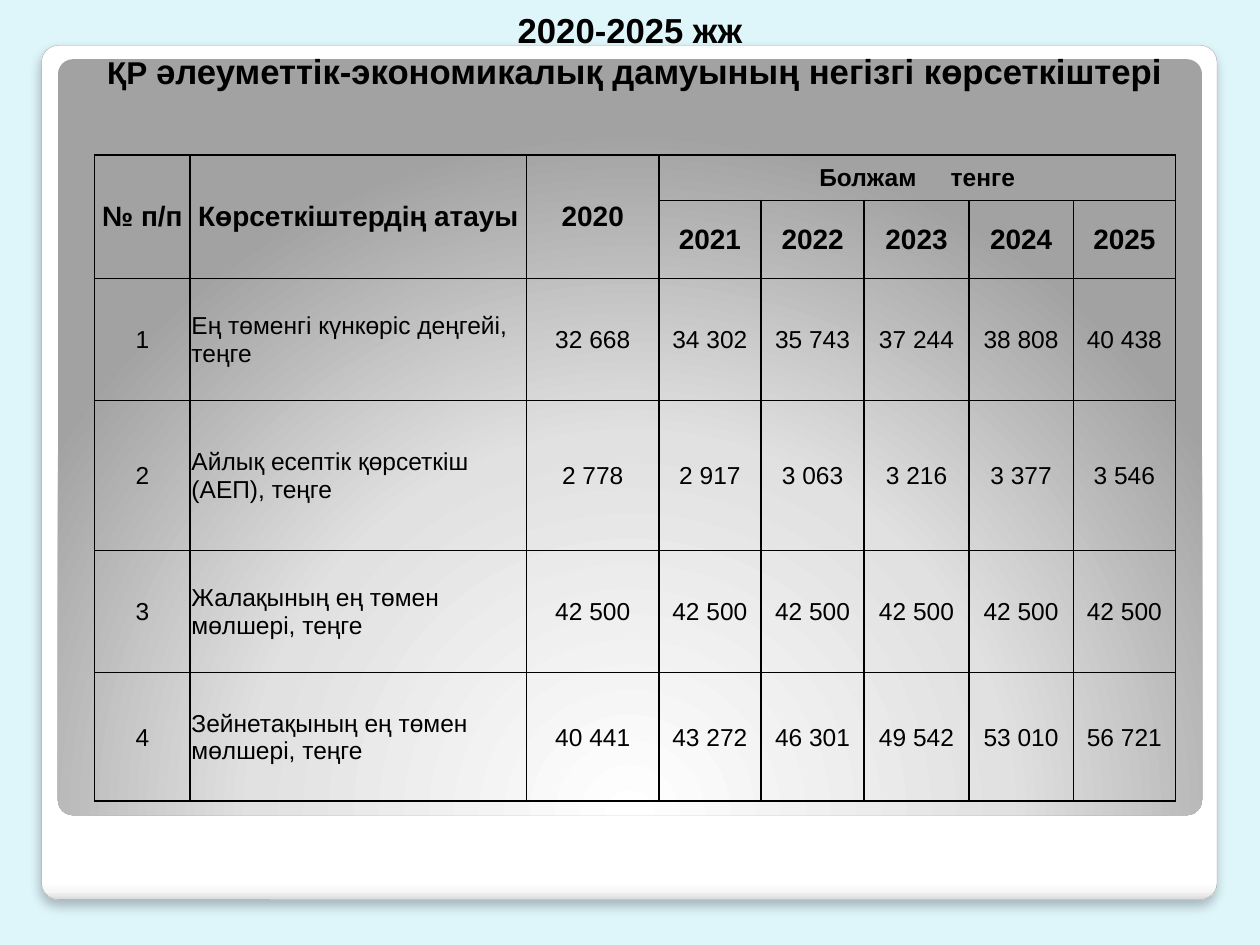
from lxml import etree
from pptx import Presentation
from pptx.dml.color import RGBColor
from pptx.enum.shapes import MSO_SHAPE as SHAPE
from pptx.enum.text import MSO_ANCHOR as ANCHOR, PP_ALIGN as ALIGN
from pptx.oxml import parse_xml
from pptx.oxml.ns import nsdecls
from pptx.util import Inches, Pt

COLORS = {"bg": "DEF5FA", "text": "000000", "edge": "A4A4A4",
          "white": "FFFFFF", "pale": "F7F7F7", "rim": "DADADA",
          "light": "E1E1E1", "gray": "A2A2A2", "outline": "00BDEC"}


def xml(tag, body, attrs=""):
    return parse_xml(f"<a:{tag} {nsdecls('a')} {attrs}>{body}</a:{tag}>")


def add_run(p, text, size, bold):
    r = p.add_run()
    r.text = text
    r.font.name = "Arial"
    r.font.size = Pt(size)
    r.font.bold = bold
    r.font.color.rgb = RGBColor.from_string(COLORS["text"])
    return r


prs = Presentation()
prs.slide_width, prs.slide_height = Inches(10), Inches(7.5)
s = prs.slides.add_slide(prs.slide_layouts[5])
s.background.fill.solid()
s.background.fill.fore_color.rgb = RGBColor.from_string(COLORS["bg"])
title = s.shapes.title

# Background panels, behind the title
panels = [
    ((0.33, 0.36, 9.33, 6.78),
     [(0, "white"), (98, "white"), (99, "pale"), (100, "rim")],
     '<a:lin ang="5400000" scaled="0"/>'),
    ((0.46, 0.47, 9.08, 6),
     [(0, "white"), (55, "light"), (100, "gray")],
     '<a:path path="circle"><a:fillToRect l="50000" t="175000" r="50000" b="-75000"/></a:path>'),
]
cards = []
for box, stops, direction in panels:
    card = s.shapes.add_shape(SHAPE.ROUNDED_RECTANGLE, *map(Inches, box))
    card.adjustments[0] = 0.02
    card.shadow.inherit = False
    card.line.fill.background()
    gs = "".join(f'<a:gs pos="{pos * 1000}"><a:srgbClr val="{COLORS[c]}"/></a:gs>'
                 for pos, c in stops)
    card.fill.background()
    no_fill = card.element.spPr.find("{*}noFill")
    card.element.spPr.replace(
        no_fill, xml("gradFill", f"<a:gsLst>{gs}</a:gsLst>{direction}", 'rotWithShape="1"'))
    title.element.addprevious(card.element)
    cards.append(card)

# Outer panel edge and soft shadow
outer = cards[0]
outer.line.color.rgb = RGBColor.from_string(COLORS["edge"])
outer.line.width = Pt(0.16)
etree.SubElement(outer.element.spPr.find("{*}effectLst"), "placeholder")
outer.element.spPr.replace(
    outer.element.spPr.find("{*}effectLst"),
    xml("effectLst", f'<a:outerShdw blurRad="{Pt(6)}" dist="{Pt(4)}" dir="5400000">'
        f'<a:srgbClr val="{COLORS["text"]}"><a:alpha val="25000"/></a:srgbClr></a:outerShdw>'))

# Title
title.left, title.top, title.width, title.height = map(Inches, (0.5, 0.44, 9, 0.63))
tf = title.text_frame
tf.word_wrap = True
tf.vertical_anchor = ANCHOR.BOTTOM
tf.margin_top, tf.margin_bottom = Inches(0), Inches(0.34)
p = tf.paragraphs[0]
p.alignment = ALIGN.CENTER
title_runs = [add_run(p, "2020-2025 жж", 19.8, True)]
p.add_line_break()
title_runs.append(add_run(p, " ҚР ", 18, True))
title_runs.append(add_run(p, "әлеуметтік-экономикалық дамуының негізгі көрсеткіштері", 19.8, True))
for r in title_runs:
    r.font._element.insert(0, xml(
        "ln", f'<a:solidFill><a:srgbClr val="{COLORS["outline"]}"><a:alpha val="55000"/>'
        '</a:srgbClr></a:solidFill><a:prstDash val="solid"/>', f'w="{Pt(0.07)}"'))

# Table
col_widths = [0.76, 2.67, 1.05, 0.81, 0.82, 0.83, 0.83, 0.81]
row_heights = [0.36, 0.62, 0.97, 1.19, 0.97, 1.02]
rows = [
    ["№ п/п", "Көрсеткіштердің атауы", "2020", "Болжам тенге", "", "", "", ""],
    ["", "", "", "2021", "2022", "2023", "2024", "2025"],
    ["1", "Ең төменгі күнкөріс деңгейі, теңге",
     "32 668", "34 302", "35 743", "37 244", "38 808", "40 438"],
    ["2", "Айлық есептік қөрсеткіш (АЕП), теңге",
     "2 778", "2 917", "3 063", "3 216", "3 377", "3 546"],
    ["3", "Жалақының ең төмен мөлшері, теңге"] + ["42 500"] * 6,
    ["4", "Зейнетақының ең төмен мөлшері, теңге",
     "40 441", "43 272", "46 301", "49 542", "53 010", "56 721"],
]
table = s.shapes.add_table(len(rows), len(col_widths), Inches(0.75), Inches(1.23),
                           Inches(8.58), Inches(5.12)).table
for col, width in zip(table.columns, col_widths):
    col.width = Inches(width)
for row, height in zip(table.rows, row_heights):
    row.height = Inches(height)
for j in range(3):
    table.cell(0, j).merge(table.cell(1, j))
table.cell(0, 3).merge(table.cell(0, 7))

for i, values in enumerate(rows):
    for j, value in enumerate(values):
        cell = table.cell(i, j)
        cell.fill.background()
        cell.vertical_anchor = ANCHOR.MIDDLE
        cell.margin_left = cell.margin_right = cell.margin_top = Inches(0.01)
        cell.margin_bottom = Inches(0)
        tcPr = cell._tc.get_or_add_tcPr()
        for k, side in enumerate(("lnL", "lnR", "lnT", "lnB")):
            tcPr.insert(k, xml(
                side, f'<a:solidFill><a:srgbClr val="{COLORS["text"]}"/></a:solidFill>',
                f'w="{Pt(1)}"'))
        if not value:
            continue
        p = cell.text_frame.paragraphs[0]
        p.alignment = ALIGN.LEFT if i > 1 and j == 1 else ALIGN.CENTER
        if (i, j) == (0, 3):
            # Wide gap between the two words of the forecast heading
            first, second = value.split()
            add_run(p, first, 14, True)
            add_run(p, " ", 14, True).font._element.set("spc", "1560")
            add_run(p, second, 14, True)
        else:
            add_run(p, value, 16 if i < 2 else 14, i < 2)

prs.save("out.pptx")
